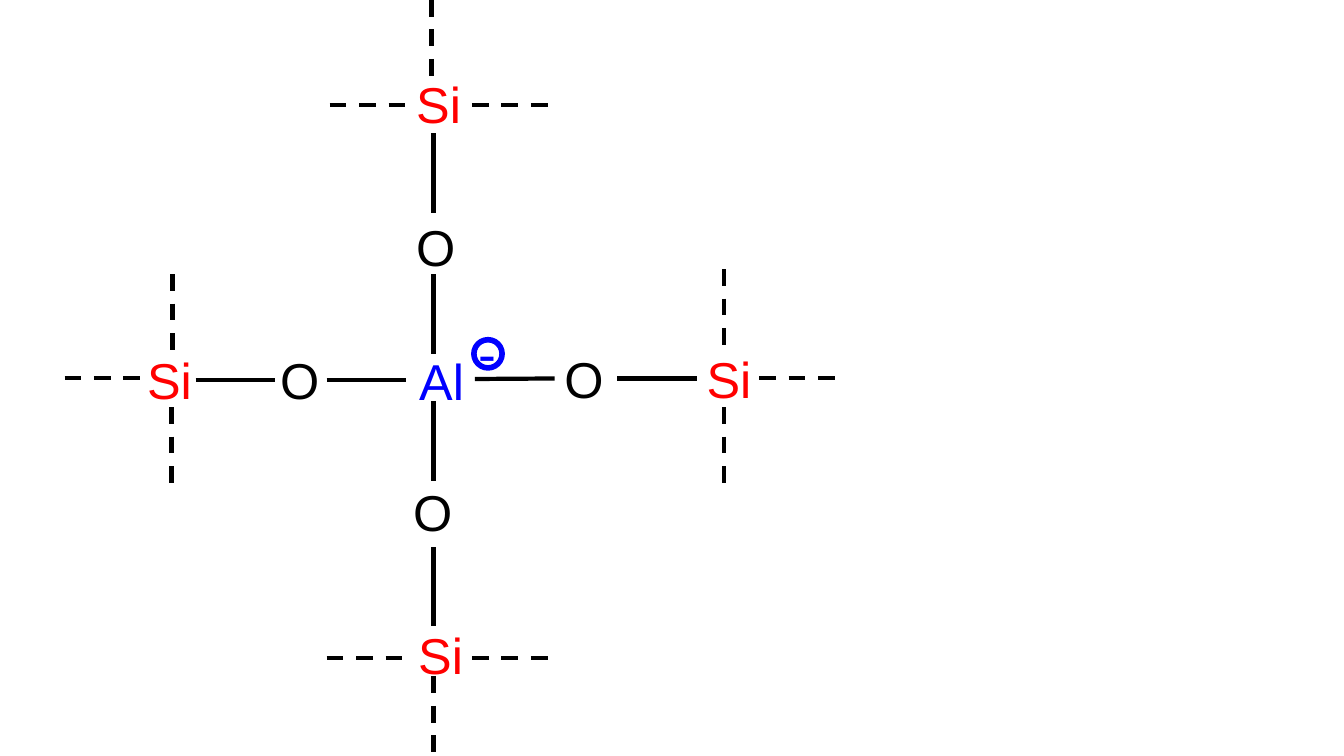
import pptx
import pptx.dml.color
import pptx.enum.dml
import pptx.enum.shapes
import pptx.enum.text
import pptx.oxml.ns
import pptx.util
from lxml import etree

PX = 9144  # EMU in one px, 100 px to the inch
BLACK, RED, BLUE = "000000", "FF0000", "0000FF"
BOND_LENGTH = 79


def color(hex_value):
    return pptx.dml.color.RGBColor.from_string(hex_value)


def add_run(paragraph, text, size, hex_value):
    run = paragraph.add_run()
    run.text = text
    font_format = {"name": "Arial", "size": pptx.util.Pt(size)}
    for key, value in font_format.items():
        setattr(run.font, key, value)
    run.font.color.rgb = color(hex_value)
    return run


deck = pptx.Presentation()
deck.slide_width, deck.slide_height = 1333 * PX, 750 * PX
slide = deck.slides.add_slide(deck.slide_layouts[6])

# Atoms: symbol, colour, left, top, width, height, wrap
atom_specs = {
    "centre Al": ("Al ", BLUE, 406, 301, 103, 121, True),
    "right O": ("O", BLACK, 550, 340, 62, 71, True),
    "bottom O": ("O", BLACK, 400, 472, 60, 71, True),
    "top O": ("O", BLACK, 403, 209, 95, 71, True),
    "left O": ("O", BLACK, 268, 341, 59, 71, False),
    "right Si": ("Si", RED, 691, 340, 77, 71, True),
    "left Si": ("Si", RED, 136, 341, 68, 71, True),
    "top Si": ("Si", RED, 403, 68, 78, 71, True),
    "bottom Si": ("Si", RED, 405, 614, 73, 71, True),
}
atoms = {}
for site, (symbol, hex_value, left, top, width, height, wrap) in atom_specs.items():
    atom = slide.shapes.add_textbox(left * PX, top * PX, width * PX, height * PX)
    frame_format = {
        "word_wrap": wrap,
        "auto_size": pptx.enum.text.MSO_AUTO_SIZE.SHAPE_TO_FIT_TEXT,
    }
    for key, value in frame_format.items():
        setattr(atom.text_frame, key, value)
    add_run(atom.text_frame.paragraphs[0], symbol, 36, hex_value)
    atoms[site] = atom

# Negative charge: raised minus sign inside a ring
minus = add_run(atoms["centre Al"].text_frame.paragraphs[0], "-", 66, BLUE)
minus.font._element.set("baseline", "30000")

ring = slide.shapes.add_shape(
    pptx.enum.shapes.MSO_SHAPE.OVAL, 470 * PX, 337 * PX, 28 * PX, 28 * PX)
ring.shadow.inherit = False
ring.fill.background()
ring.line.color.rgb = color(BLUE)
ring.line.width = pptx.util.Pt(4)

# Bonds: left or top end; solid inside the unit, dashed to the outer network
solid_across = [(612, 375), (194, 377), (324, 377), (471, 376)]
solid_down = [(430, 272), (430, 398), (430, 542), (430, 132)]
dashed_across = [(753, 375), (64, 375), (468, 653), (324, 653), (468, 104), (327, 104)]
dashed_down = [(430, 671), (428, 0), (718, 267), (171, 272), (718, 404), (170, 404)]

# Bond ends that meet the middle of an atom's side: atom, side
joined_starts = {(612, 375): ("right O", 3), (430, 542): ("bottom O", 2)}
joined_ends = {(612, 375): ("right Si", 1), (471, 376): ("right O", 1)}

for starts, dx, dy, dashed in (
    (solid_across, BOND_LENGTH, 0, False),
    (solid_down, 0, BOND_LENGTH, False),
    (dashed_across, BOND_LENGTH, 0, True),
    (dashed_down, 0, BOND_LENGTH, True),
):
    for x, y in starts:
        bond = slide.shapes.add_connector(
            pptx.enum.shapes.MSO_CONNECTOR.STRAIGHT,
            x * PX, y * PX, (x + dx) * PX, (y + dy) * PX)
        bond.line.color.rgb = color(BLACK)
        bond.line.width = pptx.util.Pt(3)
        if dashed:
            bond.line.dash_style = pptx.enum.dml.MSO_LINE.DASH
        etree.SubElement(bond._element.spPr, pptx.oxml.ns.qn("a:effectLst"))
        if (x, y) in joined_starts:
            site, side = joined_starts[x, y]
            bond.begin_connect(atoms[site], side)
        if (x, y) in joined_ends:
            site, side = joined_ends[x, y]
            bond.end_connect(atoms[site], side)

deck.save("out.pptx")
